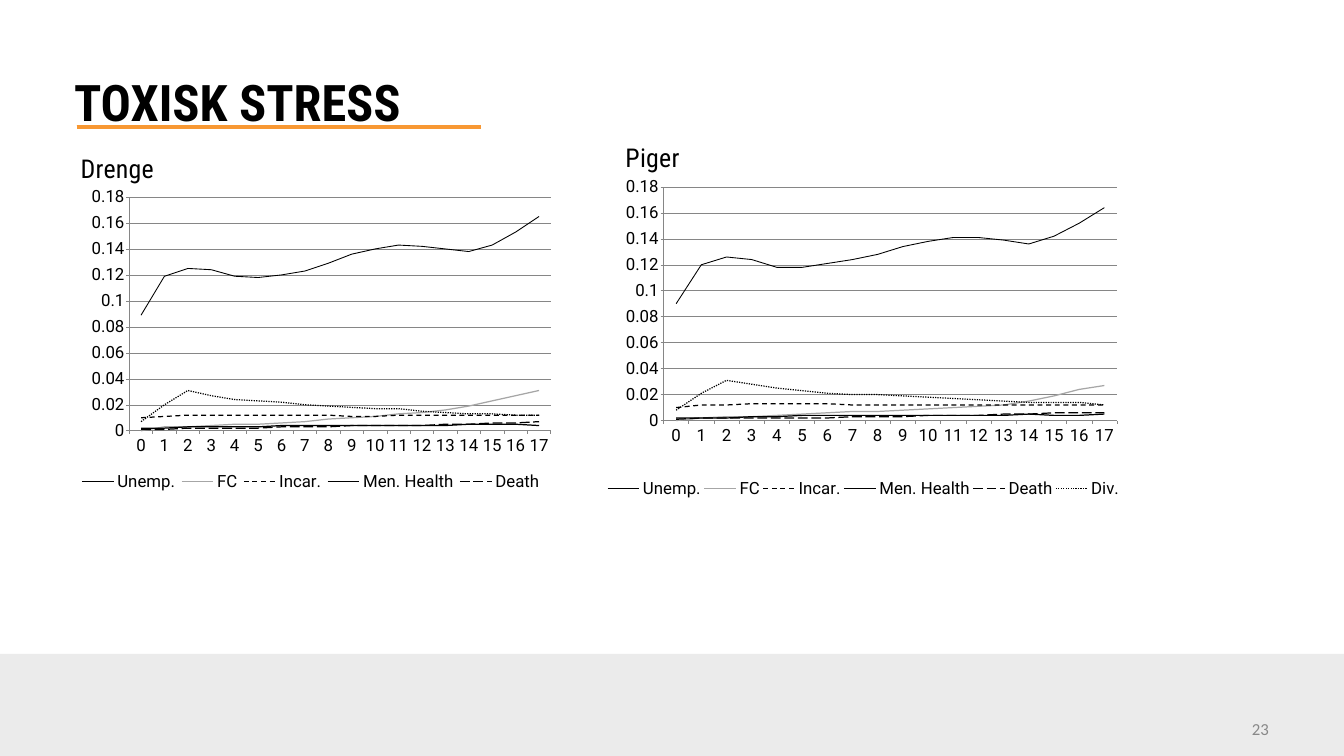
import pptx
import pptx.chart.data
import pptx.dml.color
import pptx.enum.chart
import pptx.enum.dml
import pptx.enum.shapes
import pptx.enum.text
import pptx.oxml
import pptx.oxml.ns
import pptx.util

RGB = pptx.dml.color.RGBColor
BLACK = RGB(0x00, 0x00, 0x00)
GREY = RGB(0xA6, 0xA6, 0xA6)
RULE = RGB(0x86, 0x86, 0x86)
BAND = RGB(0xEB, 0xEB, 0xEB)
ORANGE = RGB(0xF8, 0x98, 0x33)
PAGE = RGB(0x88, 0x88, 0x88)
Pt = pptx.util.Pt
DASH = pptx.enum.dml.MSO_LINE
ANCHOR = pptx.enum.text.MSO_ANCHOR
qn = pptx.oxml.ns.qn

deck = pptx.Presentation()
deck.slide_width = pptx.util.Inches(26.67)
deck.slide_height = pptx.util.Inches(15)
slide = deck.slides.add_slide(deck.slide_layouts[6])
shapes = slide.shapes

# The slide is a grid of 96 columns by 54 rows
COL = deck.slide_width / 96
ROW = deck.slide_height / 54


def write(text, box, size, face, color, bold=False, mid=True, gap=0, inset=0.08):
    """Put one line of text in a box of (column, row, columns, rows)."""
    x, y, w, h = box
    frame = shapes.add_textbox(int(x * COL), int(y * ROW), int(w * COL), int(h * ROW)).text_frame
    frame.text = text
    frame.word_wrap = True
    frame.margin_left = frame.margin_right = pptx.util.Inches(inset)
    frame.margin_top = frame.margin_bottom = pptx.util.Inches(inset)
    frame.vertical_anchor = ANCHOR.MIDDLE if mid else ANCHOR.TOP
    line = frame.paragraphs[0]
    if mid:
        line.line_spacing = 1.3
    run = line.runs[0]
    run.font.size, run.font.name, run.font.bold = Pt(size), face, bold
    run.font.color.rgb = color
    if gap:
        run._r.get_or_add_rPr().set("spc", str(gap))
    return frame


def lay(part, index, x, y, w, h, inner=False):
    """Fix the place of a chart part, in shares of the chart."""
    for old in part.findall(qn("c:layout")):
        part.remove(old)
    target = '<c:layoutTarget val="inner"/>' if inner else ""
    sizes = "".join(f'<c:{k} val="{v}"/>' for k, v in zip("xywh", (x, y, w, h)))
    part.insert(index, pptx.oxml.parse_xml(
        f'<c:layout {pptx.oxml.ns.nsdecls("c")}><c:manualLayout>{target}'
        f'<c:xMode val="edge"/><c:yMode val="edge"/>{sizes}</c:manualLayout></c:layout>'))


band = shapes.add_shape(pptx.enum.shapes.MSO_SHAPE.RECTANGLE, 0, int(46.7 * ROW),
                        deck.slide_width, int(7.45 * ROW))
band.shadow.inherit = False
band.fill.solid()
band.fill.fore_color.rgb = BAND
band.line.fill.background()

write("TOXISK STRESS", (5, 4.82, 49.2, 5.5), 72, "Roboto Condensed", BLACK, bold=True, mid=False)

for end in (18.29, 34.38):
    rule = shapes.add_connector(pptx.enum.shapes.MSO_CONNECTOR.STRAIGHT, int(5.47 * COL),
                                int(9.07 * ROW), int(end * COL), int(9.07 * ROW))
    rule.line.color.rgb = ORANGE
    rule.line.width = Pt(7)
    rule._element.spPr.append(pptx.oxml.parse_xml(f'<a:effectLst {pptx.oxml.ns.nsdecls("a")}/>'))

number = write("23", (89.06, 50.4, 2.27, 2.92), 24, "Calibri", PAGE, gap=20, inset=0.1)
number.word_wrap = False

# name, colour, width, dash
STYLES = [
    ("Unemp.", BLACK, 1.25, None),
    ("FC", GREY, 1.75, None),
    ("Incar.", BLACK, 1.75, DASH.DASH),
    ("Men. Health", BLACK, 1.75, None),
    ("Death", BLACK, 1.75, DASH.LONG_DASH),
    ("Div.", BLACK, 1.75, DASH.ROUND_DOT),
]
# Values in thousandths, by age 0 to 17
BOYS = [
    [89, 119, 125, 124, 119, 118, 120, 123, 129, 136, 140, 143, 142, 140, 138, 143, 153, 165],
    [0, 3, 3, 4, 5, 5, 6, 7, 9, 10, 11, 13, 14, 16, 19, 23, 27, 31],
    [10, 11, 12, 12, 12, 12, 12, 12, 12, 11, 11, 12, 12, 12, 12, 12, 12, 12],
    [2, 2, 3, 3, 3, 3, 4, 4, 4, 4, 4, 4, 4, 4, 5, 5, 5, 4],
    [1, 1, 2, 2, 2, 2, 3, 3, 3, 4, 4, 4, 4, 5, 5, 6, 6, 7],
    [7, 20, 31, 27, 24, 23, 22, 20, 19, 18, 17, 17, 15, 14, 13, 13, 12, 12],
]
GIRLS = [
    [90, 120, 126, 124, 118, 118, 121, 124, 128, 134, 138, 141, 141, 139, 136, 142, 152, 164],
    [0, 2, 3, 3, 4, 5, 6, 7, 7, 8, 9, 10, 11, 12, 15, 19, 24, 27],
    [10, 12, 12, 13, 13, 13, 13, 12, 12, 12, 12, 12, 12, 12, 12, 12, 12, 12],
    [2, 2, 2, 3, 3, 4, 4, 4, 4, 4, 4, 4, 4, 4, 5, 4, 4, 5],
    [1, 2, 2, 2, 2, 2, 2, 3, 3, 3, 4, 4, 4, 5, 5, 6, 6, 6],
    [8, 21, 31, 28, 25, 23, 21, 20, 20, 19, 18, 17, 16, 15, 14, 14, 14, 12],
]
# heading, its column and row, values, chart column and width, plot, legend, legend entry left out
PANELS = [
    ("Drenge", 5.47, 9.9, BOYS, 5.04, 35, (0.12, 0.07, 0.86, 0.69), (0.01, 0.86, 0.96, 0.1), 5),
    ("Piger", 44.39, 9.18, GIRLS, 42.77, 38.56, (0.12, 0.04, 0.84, 0.69), (0.01, 0.88, 0.96, 0.1), None),
]

for head, hx, hy, rows, x, w, plot, key, skip in PANELS:
    data = pptx.chart.data.CategoryChartData()
    data.categories = [str(age) for age in range(18)]
    for (name, *_), row in zip(STYLES, rows):
        data.add_series(name, [v / 1000 for v in row])
    chart = shapes.add_chart(pptx.enum.chart.XL_CHART_TYPE.LINE, int(x * COL), int(12.38 * ROW),
                             int(w * COL), int(24.2 * ROW), data).chart
    chart.has_title = False
    chart.font.size, chart.font.name = Pt(24), "Roboto"
    chart.font.color.rgb = BLACK
    chart.plots[0].vary_by_categories = False
    for series, (_, color, width, dash) in zip(chart.plots[0].series, STYLES):
        series.smooth = False
        series.marker.style = pptx.enum.chart.XL_MARKER_STYLE.NONE
        series.format.line.color.rgb = color
        series.format.line.width = Pt(width)
        if dash:
            series.format.line.dash_style = dash

    scale = chart.value_axis
    scale.minimum_scale, scale.maximum_scale, scale.major_unit = 0, 0.18, 0.02
    scale.has_major_gridlines = True
    for part in (scale, chart.category_axis, scale.major_gridlines):
        part.format.line.color.rgb = RULE
        part.format.line.width = Pt(0.75)
    for axis in (scale, chart.category_axis):
        axis.major_tick_mark = pptx.enum.chart.XL_TICK_MARK.OUTSIDE

    chart.has_legend = True
    legend = chart.legend
    legend.position = pptx.enum.chart.XL_LEGEND_POSITION.BOTTOM
    legend.include_in_layout = False
    lay(chart._chartSpace.chart.plotArea, 0, *plot, inner=True)
    lay(legend._element, 1, *key)
    if skip is not None:
        legend._element.insert(1, pptx.oxml.parse_xml(
            f'<c:legendEntry {pptx.oxml.ns.nsdecls("c")}><c:idx val="{skip}"/>'
            '<c:delete val="1"/></c:legendEntry>'))

    write(head, (hx, hy, 11.09, 3.49), 37, "Roboto Condensed", BLACK, gap=40)

deck.save("out.pptx")
